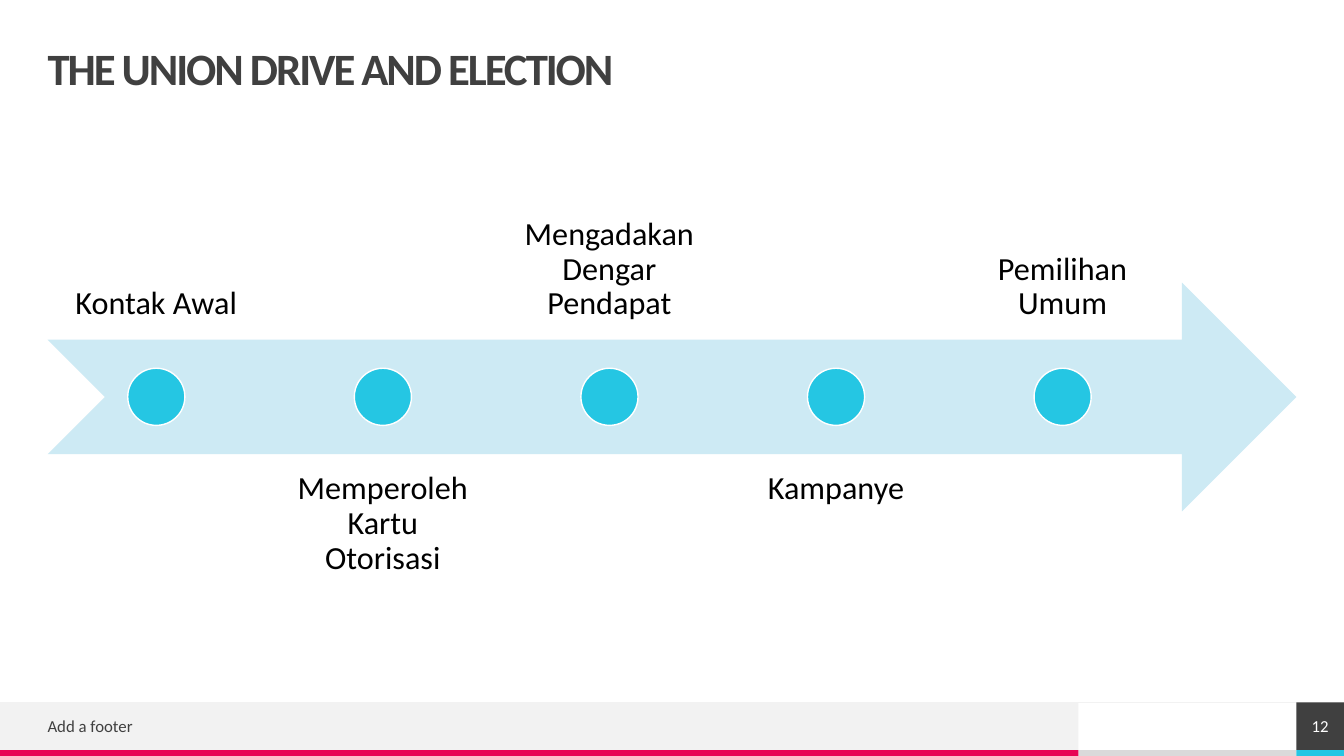
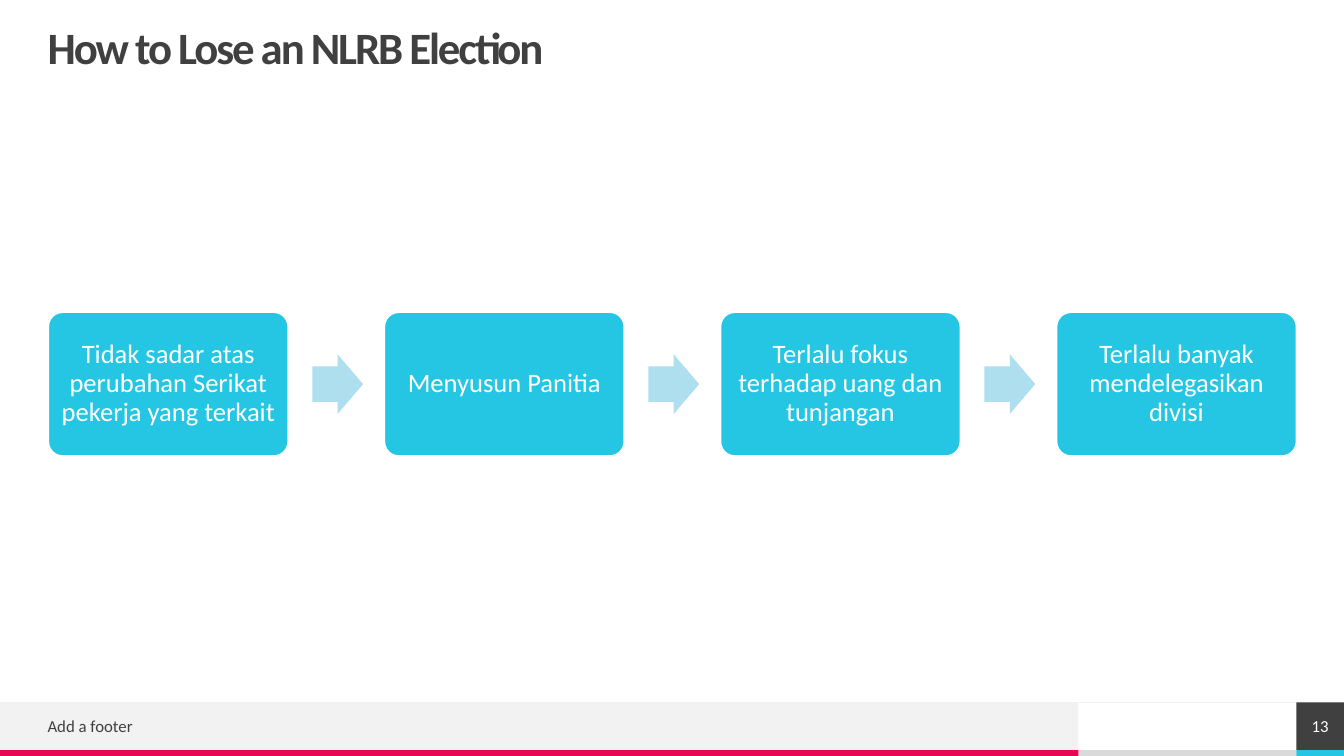
"""Build two slides on union elections with a shared title style and footer."""
import pptx
import pptx.dml.color
import pptx.enum.shapes
import pptx.enum.text
import pptx.oxml.ns
import pptx.util
from lxml import etree

Cm = pptx.util.Cm
Pt = pptx.util.Pt
SHAPE = pptx.enum.shapes.MSO_SHAPE
ANCHOR = pptx.enum.text.MSO_ANCHOR
ALIGN = pptx.enum.text.PP_ALIGN

FONT = "Calibri"
CYAN, PINK, DARK, WHITE, BLACK = "25C6E3", "E80554", "404040", "FFFFFF", "000000"
LIGHT_GREY, MID_GREY = "F2F2F2", "DADADA"
PALE_CYAN, SOFT_CYAN = "CDEAF4", "ADDFEF"

SLIDE_WIDTH, SLIDE_HEIGHT = 33.87, 19.05
MARGIN, CONTENT_WIDTH = 1.2, 31.47
FOOTER_TOP, FOOTER_HEIGHT, STRIP_HEIGHT = 17.7, 1.2, 0.15
STRIP_TOP = FOOTER_TOP + FOOTER_HEIGHT
BAND_WIDTH, NUMBER_LEFT = 27.18, 32.67


def rgb(value):
    """Return the colour for a hex string."""
    return pptx.dml.color.RGBColor.from_string(value)


def box(left, top, width, height):
    """Return a position and size given in centimetres."""
    return Cm(left), Cm(top), Cm(width), Cm(height)


def style_paragraph(paragraph, size, colour, align, bold=False, spacing=None, tracking=0):
    """Set the font, alignment, line spacing and letter spacing of a paragraph."""
    paragraph.font.name = FONT
    paragraph.font.size = Pt(size)
    paragraph.font.bold = bold
    paragraph.font.color.rgb = rgb(colour)
    paragraph.alignment = align
    paragraph.line_spacing = spacing
    if tracking:
        for run in paragraph.runs:
            run._r.get_or_add_rPr().set("spc", str(tracking))


def write_text(shape, text, size, colour, align=ALIGN.CENTER, anchor=ANCHOR.MIDDLE,
               inset=0, **style):
    """Write one styled paragraph into a shape with equal insets."""
    frame = shape.text_frame
    frame.auto_size = pptx.enum.text.MSO_AUTO_SIZE.NONE
    frame.word_wrap = True
    frame.vertical_anchor = anchor
    frame.margin_left = frame.margin_right = Cm(inset)
    frame.margin_top = frame.margin_bottom = Cm(inset)
    frame.text = text
    style_paragraph(frame.paragraphs[0], size, colour, align, **style)


def add_shape(slide, kind, place, fill, outline=None):
    """Add a flat preset shape with an optional thin outline."""
    shape = slide.shapes.add_shape(kind, *box(*place))
    shape.shadow.inherit = False
    shape.fill.solid()
    shape.fill.fore_color.rgb = rgb(fill)
    if outline:
        shape.line.color.rgb = rgb(outline)
        shape.line.width = Pt(1)
    else:
        shape.line.fill.background()
    return shape


def add_text(slide, place, text, size, colour, **style):
    """Add a text box holding one paragraph."""
    write_text(slide.shapes.add_textbox(*box(*place)), text, size, colour, **style)


def add_rule(slide):
    """Add the hairline above the footer."""
    rule = slide.shapes.add_connector(
        pptx.enum.shapes.MSO_CONNECTOR.STRAIGHT,
        Cm(0), Cm(FOOTER_TOP), Cm(SLIDE_WIDTH), Cm(FOOTER_TOP))
    rule.line.color.rgb = rgb(LIGHT_GREY)
    rule.line.width = Pt(0.5)
    properties = rule.element.find(pptx.oxml.ns.qn("p:spPr"))
    etree.SubElement(properties, pptx.oxml.ns.qn("a:effectLst"))
    return rule


def move_bands_to_layout(slide):
    """Draw the footer bands and keep them on the layout shared by all slides."""
    layout = slide.slide_layout
    for placeholder in list(layout.placeholders):
        if placeholder.placeholder_format.idx:
            placeholder.element.getparent().remove(placeholder.element)
    bands = (
        (BAND_WIDTH, STRIP_TOP, NUMBER_LEFT - BAND_WIDTH, STRIP_HEIGHT, MID_GREY),
        (0, FOOTER_TOP, BAND_WIDTH, FOOTER_HEIGHT, LIGHT_GREY),
        (0, STRIP_TOP, BAND_WIDTH, STRIP_HEIGHT, PINK),
        (NUMBER_LEFT, STRIP_TOP, SLIDE_WIDTH - NUMBER_LEFT, STRIP_HEIGHT, CYAN),
    )
    shapes = [add_shape(slide, SHAPE.RECTANGLE, place, fill) for *place, fill in bands]
    for shape in shapes + [add_rule(slide)]:
        layout.shapes.element.append(shape.element)


def add_title(slide, text, top):
    """Place and format the title placeholder."""
    title = slide.shapes.title
    title.left, title.top, title.width, title.height = box(MARGIN, top, CONTENT_WIDTH, 1.19)
    write_text(title, text, 32, DARK, align=ALIGN.LEFT, bold=True, spacing=0.9, tracking=-150)


def add_footer(slide, number):
    """Add the footer text and the slide number."""
    add_text(slide, (MARGIN, 17.88, 15.72, 0.81), "Add a footer", 12, DARK, align=ALIGN.LEFT)
    place = (NUMBER_LEFT, FOOTER_TOP, SLIDE_WIDTH - NUMBER_LEFT, FOOTER_HEIGHT)
    write_text(add_shape(slide, SHAPE.RECTANGLE, place, DARK), str(number), 12, WHITE)


def add_timeline(slide, steps):
    """Add an arrow with dots and labels alternating above and below it."""
    left, pitch, label_width, height, dot = 1.22, 5.71, 5.44, 5.77, 1.44
    add_shape(slide, SHAPE.NOTCHED_RIGHT_ARROW, (MARGIN, 7.12, CONTENT_WIDTH, height), PALE_CYAN)
    for index, step in enumerate(steps):
        label_left = left + index * pitch
        top, anchor = (11.43, ANCHOR.TOP) if index % 2 else (2.8, ANCHOR.BOTTOM)
        add_text(slide, (label_left, top, label_width, height), step, 23, BLACK,
                 anchor=anchor, inset=0.46, spacing=0.9)
        dot_left = label_left + (label_width - dot) / 2
        add_shape(slide, SHAPE.OVAL, (dot_left, 9.28, dot, dot), CYAN, WHITE)


def add_process(slide, steps):
    """Add a row of rounded boxes with a block arrow between neighbours."""
    left, top, pitch, width, height = 1.22, 7.87, 8.47, 6.04, 3.62
    arrow_width, arrow_height = 1.28, 1.5
    for index, step in enumerate(steps):
        step_left = left + index * pitch
        if index:
            place = (step_left - 1.82, top + (height - arrow_height) / 2,
                     arrow_width, arrow_height)
            arrow = add_shape(slide, SHAPE.RIGHT_ARROW, place, SOFT_CYAN)
            arrow.adjustments[0] = 0.6
        step_box = add_shape(slide, SHAPE.ROUNDED_RECTANGLE,
                             (step_left, top, width, height), CYAN, WHITE)
        step_box.adjustments[0] = 0.1
        write_text(step_box, step, 19, WHITE, inset=0.2, spacing=0.9)


def main():
    """Build and save the presentation."""
    presentation = pptx.Presentation()
    presentation.slide_width = Cm(SLIDE_WIDTH)
    presentation.slide_height = Cm(SLIDE_HEIGHT)
    layout = presentation.slide_layouts[5]

    election = presentation.slides.add_slide(layout)
    move_bands_to_layout(election)
    add_title(election, "THE UNION DRIVE AND ELECTION", 1.19)
    add_timeline(election, (
        "Kontak Awal",
        "Memperoleh Kartu Otorisasi",
        "Mengadakan Dengar Pendapat",
        "Kampanye",
        "Pemilihan Umum",
    ))
    add_footer(election, 12)

    losing = presentation.slides.add_slide(layout)
    add_title(losing, "How to Lose an NLRB Election", 0.66)
    add_process(losing, (
        "Tidak sadar atas perubahan Serikat pekerja yang terkait",
        "Menyusun Panitia",
        "Terlalu fokus terhadap uang dan tunjangan",
        "Terlalu banyak mendelegasikan divisi",
    ))
    add_footer(losing, 13)

    presentation.save("out.pptx")


if __name__ == "__main__":
    main()
